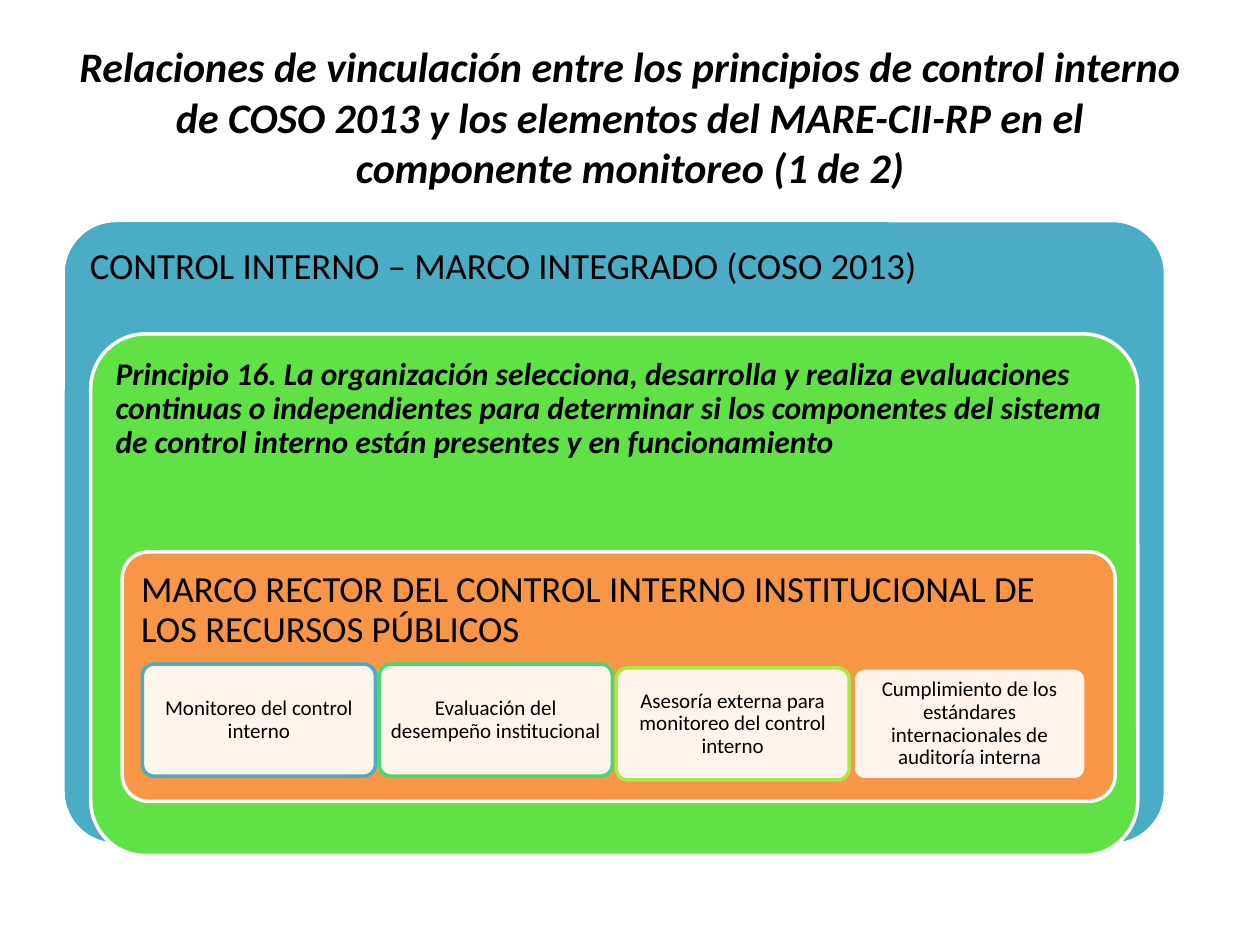
from lxml.etree import SubElement
from pptx import Presentation
from pptx.dml.color import RGBColor
from pptx.enum.shapes import MSO_SHAPE
from pptx.enum.text import MSO_ANCHOR, MSO_AUTO_SIZE, PP_ALIGN
from pptx.oxml.ns import qn
from pptx.util import Inches, Pt

CARD_LEFT, CARD_PITCH, CARD_WIDTH, CARD_HEIGHT = 1.13, 1.88, 1.85, 0.89

PANELS = [
    ((0.5, 1.75, 8.75, 4.95), 0.085, "4BACC6",
     "CONTROL INTERNO – MARCO INTEGRADO (COSO 2013)",
     dict(size=21, margin=0.09)),
    ((0.72, 2.65, 8.31, 4.14), 0.105, "60E146",
     "Principio 16. La organización selecciona, desarrolla y realiza evaluaciones "
     "continuas o independientes para determinar si los componentes del sistema "
     "de control interno están presentes y en funcionamiento",
     dict(size=18, margin=0.07, emphasis=True)),
    ((0.97, 4.38, 7.88, 1.98), 0.105, "F79646",
     "MARCO RECTOR DEL CONTROL INTERNO INSTITUCIONAL DE LOS RECURSOS PÚBLICOS",
     dict(size=21, margin=0.09)),
]

CARDS = [
    ("Monitoreo del control interno", "4BACC6", 5.27),
    ("Evaluación del desempeño institucional", "47D872", 5.27),
    ("Asesoría externa para monitoreo del control interno", "ACE946", 5.3),
    ("Cumplimiento de los estándares internacionales de auditoría interna", "F79646", 5.3),
]


def color(value):
    return RGBColor.from_string(value)


def place(shape, left, top, width, height):
    shape.left, shape.top = Inches(left), Inches(top)
    shape.width, shape.height = Inches(width), Inches(height)


def write_text(shape, text, size, margin=0.05, emphasis=False, spacing=0.9,
               align=PP_ALIGN.LEFT, anchor=MSO_ANCHOR.TOP):
    frame = shape.text_frame
    frame.text = text
    frame.word_wrap = True
    frame.auto_size = MSO_AUTO_SIZE.NONE
    frame.vertical_anchor = anchor
    frame.margin_left = frame.margin_right = Inches(margin)
    frame.margin_top = frame.margin_bottom = Inches(margin)
    paragraph = frame.paragraphs[0]
    paragraph.alignment = align
    paragraph.line_spacing = spacing
    font = paragraph.runs[0].font
    font.name = "Calibri"
    font.size = Pt(size)
    font.bold = font.italic = emphasis
    font.color.rgb = color("000000")


def add_rounded_box(slide, box, rounding, fill, line, opacity=100):
    shape = slide.shapes.add_shape(MSO_SHAPE.ROUNDED_RECTANGLE, *map(Inches, box))
    shape.adjustments[0] = rounding
    shape.shadow.inherit = False
    shape.fill.solid()
    shape.fill.fore_color.rgb = color(fill)
    shape.line.color.rgb = color(line)
    shape.line.width = Pt(2)
    if opacity < 100:
        fill_color = shape.element.spPr.find(qn("a:solidFill")).find(qn("a:srgbClr"))
        SubElement(fill_color, qn("a:alpha"), val=str(opacity * 1000))
    return shape


def add_title(slide, text):
    title = slide.shapes.title
    place(title, 0.5, 0.3, 9, 1.25)
    write_text(title, text, 24, margin=0.1, emphasis=True, spacing=1.0,
               align=PP_ALIGN.CENTER, anchor=MSO_ANCHOR.MIDDLE)


def add_card(slide, column, text, line, top):
    box = (CARD_LEFT + column * CARD_PITCH, top, CARD_WIDTH, CARD_HEIGHT)
    card = add_rounded_box(slide, box, 0.105, "FFFFFF", line, opacity=90)
    write_text(card, text, 12, align=PP_ALIGN.CENTER, anchor=MSO_ANCHOR.MIDDLE)


def main():
    presentation = Presentation()
    presentation.slide_width, presentation.slide_height = Inches(10), Inches(7.5)
    slide = presentation.slides.add_slide(presentation.slide_layouts[5])
    add_title(slide, "Relaciones de vinculación entre los principios de control interno "
                     "de COSO 2013 y los elementos del MARE-CII-RP en el "
                     "componente monitoreo (1 de 2)")
    for box, rounding, fill, text, text_format in PANELS:
        panel = add_rounded_box(slide, box, rounding, fill, "FFFFFF")
        write_text(panel, text, **text_format)
    for column, (text, line, top) in enumerate(CARDS):
        add_card(slide, column, text, line, top)
    presentation.save("out.pptx")


if __name__ == "__main__":
    main()
